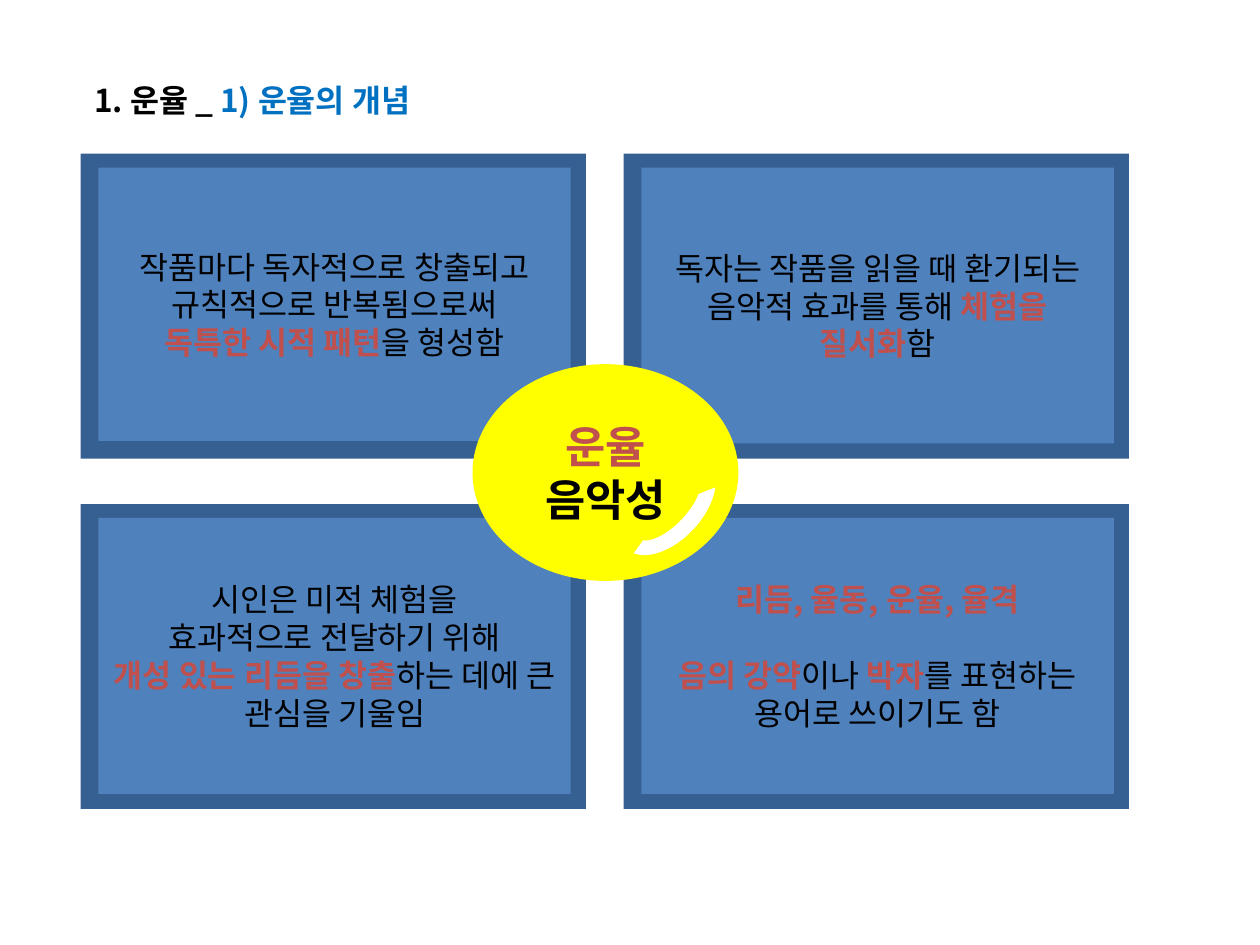
from pptx import Presentation
from pptx import util as u
from pptx.dml.color import RGBColor
from pptx.enum import shapes, text
from pptx.oxml import ns
from lxml import etree

FONT = "Noto Sans CJK KR"
BLACK, RED, BLUE, WHITE, YELLOW = "000000", "C0504D", "0070C0", "FFFFFF", "FFFF00"
FRAME, PANEL = "376092", "4F81BD"

# Content: each paragraph is a list of (text, colour, bold)
TITLE = [[("1. 운율 _ ", BLACK, True), ("1) 운율의 개념", BLUE, True)]]
CENTER = [[("운율", RED, True)], [("음악성", BLACK, True)]]
PANELS = [
    {"paras": [[("작품마다 독자적으로 창출되고 규칙적으로 반복됨으로써", BLACK, False)],
               [("독특한 시적 패턴", RED, True), ("을 형성함", BLACK, False)]],
     "height": 2.17},
    {"paras": [[("독자는 작품을 읽을 때 환기되는 음악적 효과를 통해 ", BLACK, False),
                ("체험을 질서화", RED, True), ("함", BLACK, False)]]},
    {"paras": [[("시인은 미적 체험을", BLACK, False)],
               [("효과적으로 전달하기 위해", BLACK, False)],
               [("개성 있는 리듬을 창출", RED, True),
                ("하는 데에 큰 관심을 기울임", BLACK, False)]]},
    {"paras": [[("리듬, 율동, 운율, 율격", RED, True)],
               [("음의 강약", RED, True), ("이나 ", BLACK, False), ("박자", RED, True),
                ("를 표현하는 용어로 쓰이기도 함", BLACK, False)]],
     "gap": 21.7},
]

# Grid of frames
LEFT, TOP, STEP_X, STEP_Y = 0.64, 1.22, 4.31, 2.78
FRAME_SIZE = (4.01, 2.42)


def color(value):
    return RGBColor.from_string(value)


def add_shape(page, kind, left, top, width, height, fill):
    shape = page.shapes.add_shape(kind, *map(u.Inches, (left, top, width, height)))
    shape.shadow.inherit = False
    shape.fill.solid()
    shape.fill.fore_color.rgb = color(fill)
    shape.line.fill.background()
    return shape


def write(shape, paras, size=18, align=text.PP_ALIGN.CENTER,
          anchor=text.MSO_ANCHOR.MIDDLE, gap=0):
    frame = shape.text_frame
    frame.word_wrap = True
    frame.vertical_anchor = anchor
    for index, spans in enumerate(paras):
        para = frame.add_paragraph() if index else frame.paragraphs[0]
        para.alignment = align
        if index and gap:
            para.space_before = u.Pt(gap)
        for words, tint, bold in spans:
            span = para.add_run()
            span.text = words
            span.font.size = u.Pt(size)
            span.font.bold = bold
            span.font.color.rgb = color(tint)
            span.font.name = FONT
            # Korean letters take the East Asian font
            east = etree.SubElement(span.font._element, ns.qn("a:ea"))
            east.set("typeface", FONT)


def main():
    deck = Presentation()
    deck.slide_width, deck.slide_height = u.Inches(10), u.Inches(7.5)
    page = deck.slides.add_slide(deck.slide_layouts[6])
    kinds = shapes.MSO_SHAPE

    # Four framed panels
    for index, panel in enumerate(PANELS):
        row, column = divmod(index, 2)
        left, top = LEFT + column * STEP_X, TOP + row * STEP_Y
        add_shape(page, kinds.RECTANGLE, left, top, *FRAME_SIZE, FRAME)
        box = add_shape(page, kinds.RECTANGLE, left + 0.14, top + 0.11,
                        3.75, panel.get("height", 2.19), PANEL)
        write(box, panel["paras"], gap=panel.get("gap", 0))

    # Title
    title = page.shapes.add_textbox(*map(u.Inches, (0.65, 0.59, 4.14, 0.4)))
    write(title, TITLE, align=text.PP_ALIGN.LEFT, anchor=text.MSO_ANCHOR.TOP)

    # Centre ellipse with its highlight
    ellipse = add_shape(page, kinds.OVAL, 3.75, 2.89, 2.11, 1.72, YELLOW)
    write(ellipse, CENTER, size=25)
    shine = add_shape(page, kinds.BLOCK_ARC, 4.83, 3.74, 0.94, 0.55, WHITE)
    shine.rotation = 133.3
    for index, value in enumerate((123.26, 211.45, 0.22)):
        shine.adjustments[index] = value

    deck.save("out.pptx")


if __name__ == "__main__":
    main()
